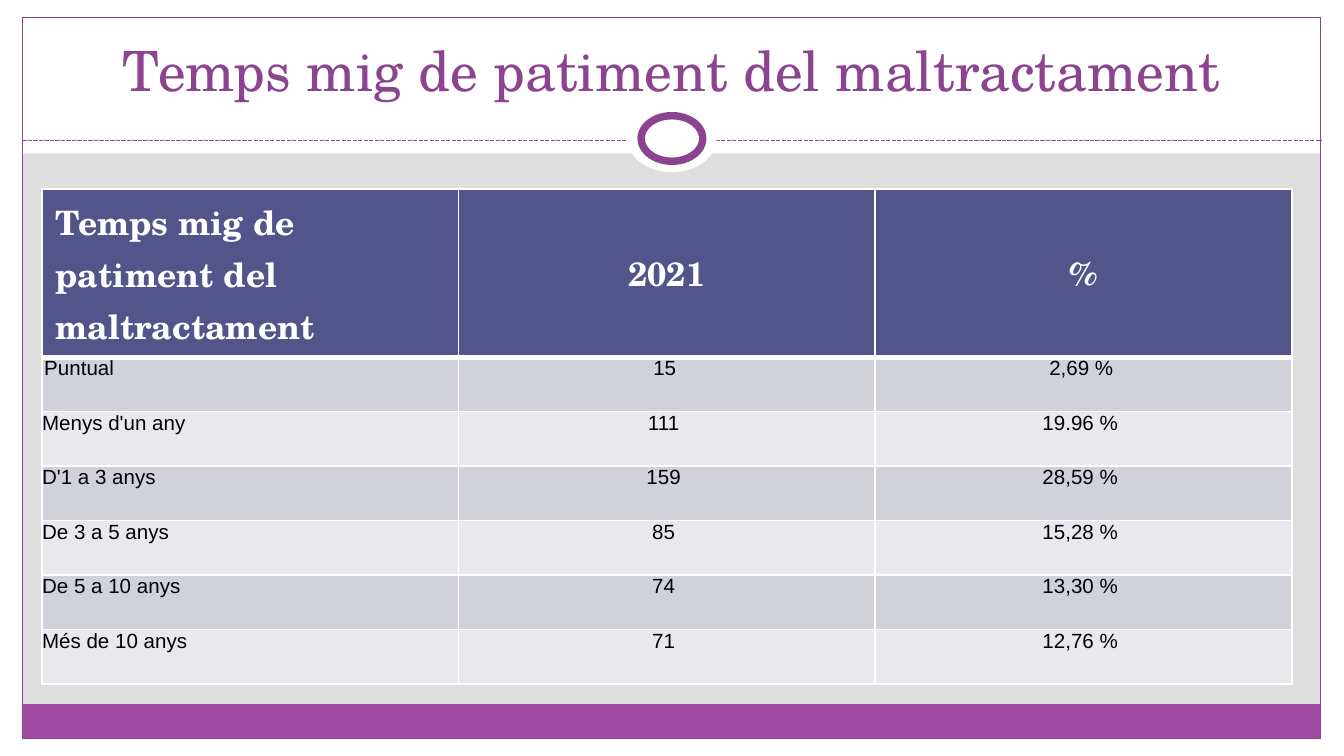
from lxml import etree
from pptx import Presentation
from pptx.dml.color import RGBColor
from pptx.enum.dml import MSO_LINE
from pptx.enum.shapes import MSO_CONNECTOR, MSO_SHAPE
from pptx.enum.text import MSO_ANCHOR, PP_ALIGN
from pptx.oxml.ns import qn
from pptx.util import Pt

WIDTH, HEIGHT = 720, 405
COLORS = {
    "white": "FFFFFF", "backdrop": "DEDEDE", "purple": "8D4490",
    "footer": "A04DA3", "header": "53548A", "ink": "00000A",
    "band_dark": "D1D1DA", "band_light": "E9E9ED",
}
SERIF, SANS = "TeX Gyre Schola", "Arial"
HEADINGS = ["Temps mig de patiment del maltractament", "2021", "%"]
DURATIONS = [
    ("Puntual", "15", "2,69 %"),
    ("Menys d'un any", "111", "19.96 %"),
    ("D'1 a 3 anys", "159", "28,59 %"),
    ("De 3 a 5 anys", "85", "15,28 %"),
    ("De 5 a 10 anys", "74", "13,30 %"),
    ("Més de 10 anys", "71", "12,76 %"),
]


def color(name):
    return RGBColor.from_string(COLORS[name])


def points(box):
    return [Pt(value) for value in box]


def write(frame, text, *, font, size, ink, bold=False, align=PP_ALIGN.LEFT):
    paragraph = frame.paragraphs[0]
    paragraph.alignment = align
    run = paragraph.add_run()
    run.text = text
    run.font.name = font
    run.font.size = Pt(size)
    run.font.bold = bold
    run.font.color.rgb = color(ink)


def draw(slide, kind, box, fill=None, line=None, weight=0.75):
    shape = slide.shapes.add_shape(kind, *points(box))
    shape.shadow.inherit = False
    if fill:
        shape.fill.solid()
        shape.fill.fore_color.rgb = color(fill)
    else:
        shape.fill.background()
    if line:
        shape.line.color.rgb = color(line)
        shape.line.width = Pt(weight)
    else:
        shape.line.fill.background()


def add_frame(slide, box):
    """White margins, footer band and purple outline around the box."""
    left, top, width, height = box
    right, bottom = left + width, top + height
    margins = [
        (0, bottom, WIDTH, HEIGHT - bottom),
        (0, 0, WIDTH, 82.2),
        (0, 0, left, HEIGHT),
        (right, 0, WIDTH - right, HEIGHT),
    ]
    for margin in margins:
        draw(slide, MSO_SHAPE.RECTANGLE, margin, "white")
    draw(slide, MSO_SHAPE.RECTANGLE, (left, bottom - 18.5, width, 18.5), "footer")
    draw(slide, MSO_SHAPE.RECTANGLE, box, line="purple")


def add_divider(slide, box):
    """Dashed rule with a ring at its centre."""
    left, top, width, height = box
    middle = left + width / 2
    rule_y = top + 19.2
    rule = slide.shapes.add_connector(
        MSO_CONNECTOR.STRAIGHT, *points((left, rule_y, left + width, rule_y)))
    rule.line.color.rgb = color("purple")
    rule.line.width = Pt(0.75)
    rule.line.dash_style = MSO_LINE.SQUARE_DOT
    etree.SubElement(rule._element.spPr, qn("a:effectLst"))
    draw(slide, MSO_SHAPE.OVAL, (middle - 24, top, 48, height), "white")
    draw(slide, MSO_SHAPE.OVAL, (middle - 16.5, top + 5.8, 33, height - 11.6),
         "white", "purple", 4)


def add_title(slide, box, text):
    frame = slide.shapes.add_textbox(*points(box)).text_frame
    frame.word_wrap = True
    frame.vertical_anchor = MSO_ANCHOR.BOTTOM
    write(frame, text, font=SERIF, size=29.7, ink="purple", align=PP_ALIGN.CENTER)


def style_cell(cell, fill, bottom_weight=1, top_weight=1):
    properties = cell._tc.get_or_add_tcPr()
    weights = {"L": 1, "R": 1, "T": top_weight, "B": bottom_weight}
    for side, weight in weights.items():
        border = etree.SubElement(properties, qn(f"a:ln{side}"), w=str(Pt(weight)))
        solid = etree.SubElement(border, qn("a:solidFill"))
        etree.SubElement(solid, qn("a:srgbClr"), val=COLORS["white"])
    cell.fill.solid()
    cell.fill.fore_color.rgb = color(fill)


def add_durations_table(slide, box):
    header_height = 90
    row_height = (box[3] - header_height) / len(DURATIONS)
    table = slide.shapes.add_table(
        len(DURATIONS) + 1, len(HEADINGS), *points(box)).table
    for column in table.columns:
        column.width = Pt(box[2] / len(HEADINGS))
    for index, row in enumerate(table.rows):
        row.height = Pt(row_height if index else header_height)

    for column, heading in enumerate(HEADINGS):
        cell = table.cell(0, column)
        style_cell(cell, "header", bottom_weight=3)
        cell.vertical_anchor = MSO_ANCHOR.MIDDLE if column else MSO_ANCHOR.TOP
        write(cell.text_frame, heading, font=SERIF, size=18, ink="white", bold=True,
              align=PP_ALIGN.CENTER if column else PP_ALIGN.LEFT)

    for row, values in enumerate(DURATIONS, 1):
        for column, value in enumerate(values):
            cell = table.cell(row, column)
            style_cell(cell, "band_dark" if row % 2 else "band_light",
                       top_weight=3 if row == 1 else 1)
            cell.margin_left = Pt(1.2 if row == 1 else 0)
            cell.margin_right = Pt(3.6)
            cell.margin_top = cell.margin_bottom = 0
            write(cell.text_frame, value, font=SANS, size=11, ink="ink",
                  align=PP_ALIGN.CENTER if column else PP_ALIGN.LEFT)


def main():
    deck = Presentation()
    deck.slide_width, deck.slide_height = Pt(WIDTH), Pt(HEIGHT)
    slide = deck.slides.add_slide(deck.slide_layouts[6])
    slide.background.fill.solid()
    slide.background.fill.fore_color.rgb = color("backdrop")
    add_frame(slide, (12, 9.2, 695.6, 386.5))
    add_divider(slide, (12, 56.2, 696, 36))
    add_title(slide, (24, 13.7, 672, 44.6), HEADINGS[0])
    add_durations_table(slide, (22.5, 101.3, 669.6, 265.2))
    deck.save("out.pptx")


if __name__ == "__main__":
    main()
